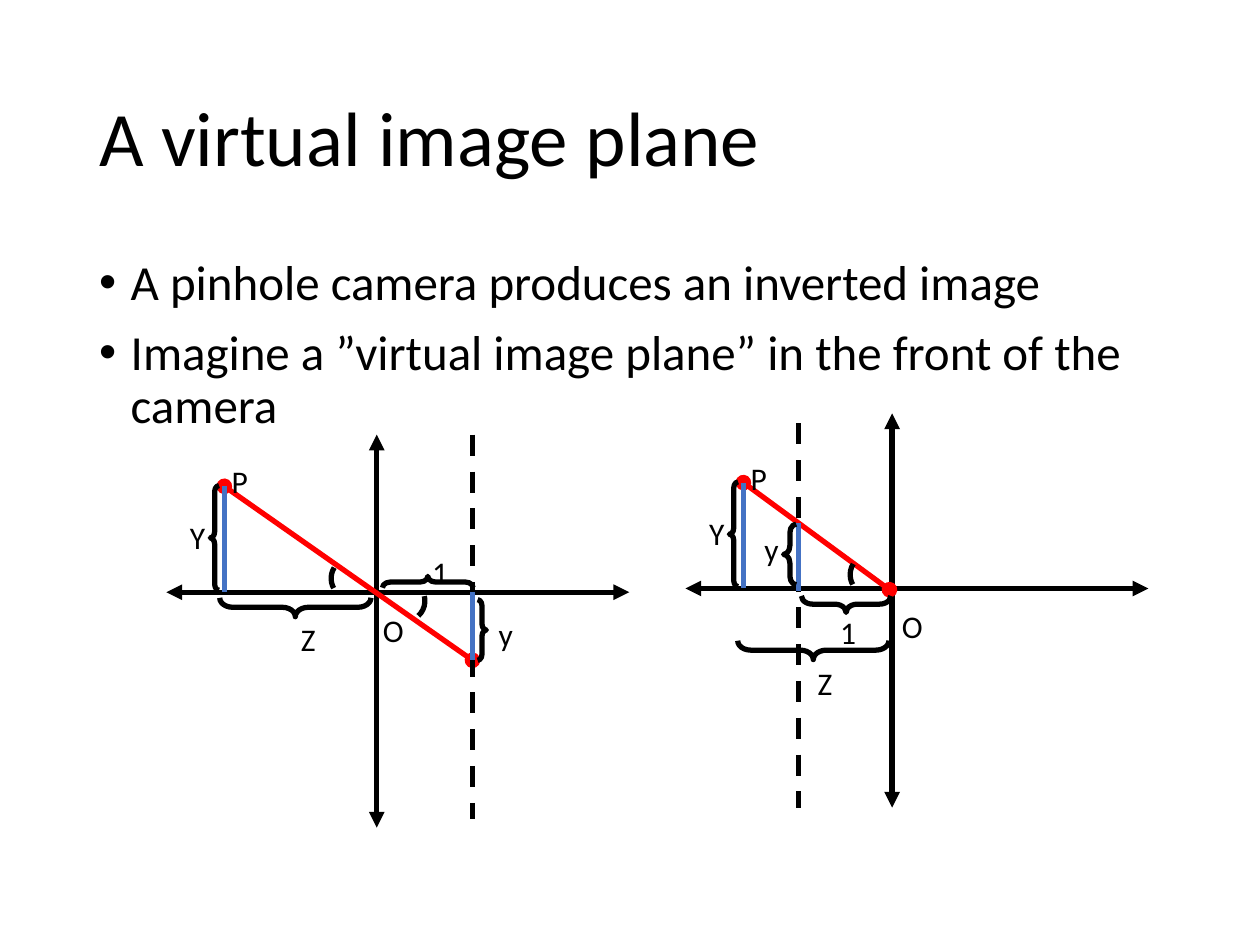
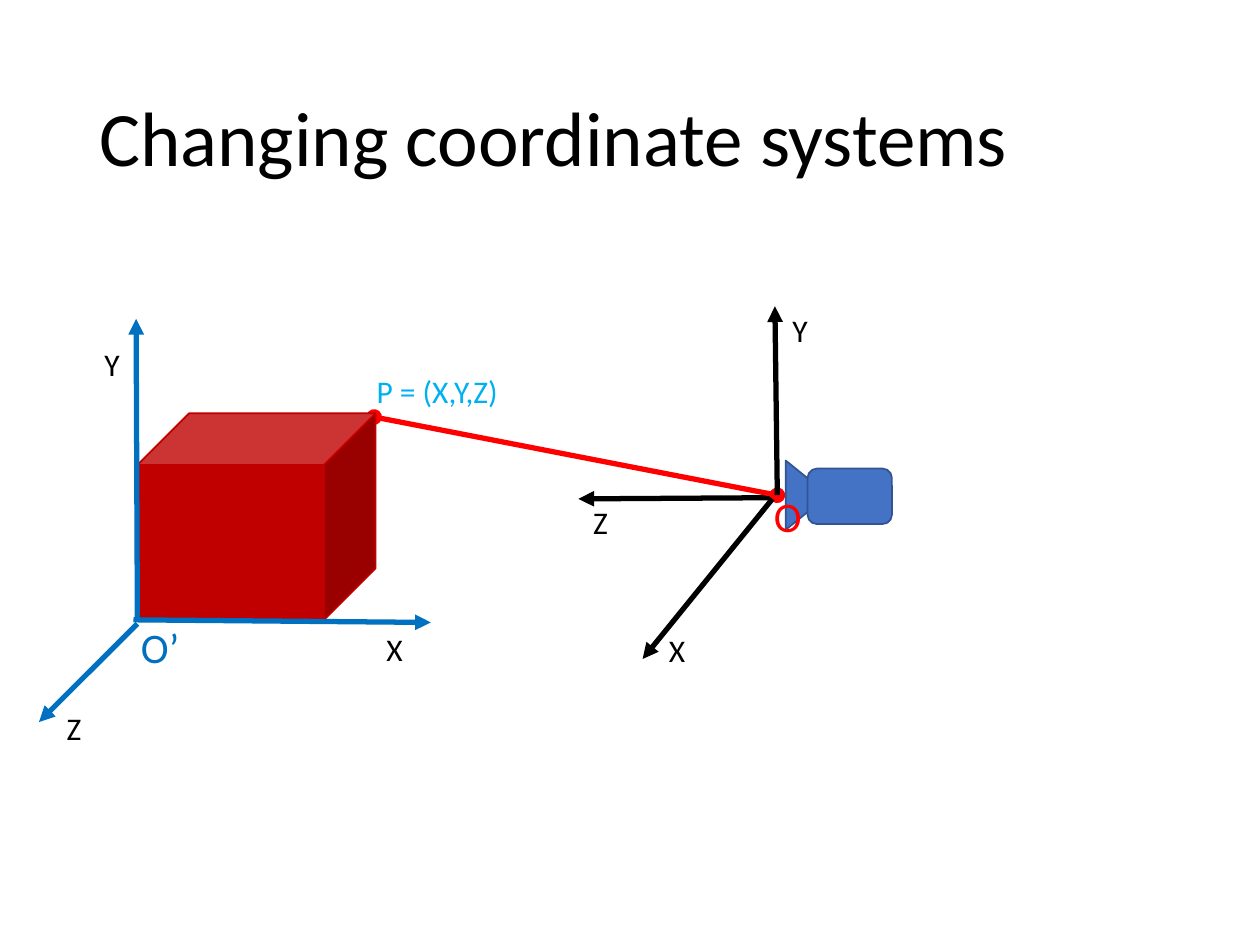
"""Build two slides on the virtual image plane and on changing coordinate systems."""
import pptx
import pptx.dml.color
import pptx.enum.dml
import pptx.enum.shapes
import pptx.enum.text
import pptx.oxml
import pptx.oxml.ns
import pptx.util

Pt = pptx.util.Pt
SHAPES = pptx.enum.shapes.MSO_SHAPE
COLOURS = {
    "black": "000000",
    "ray": "FF0000",
    "segment": "4472C4",
    "camera edge": "325491",
    "cube": "C00000",
    "world": "0070C0",
    "point": "00B0F0",
}
FONT = "Calibri"
TITLE_ONLY, TITLE_AND_CONTENT = 5, 1


class Deck:
    def __init__(self):
        self.presentation = pptx.Presentation()
        self.presentation.slide_width = Pt(720)
        self.presentation.slide_height = Pt(540)
        self.slide = None

    def colour(self, name):
        return pptx.dml.color.RGBColor.from_string(COLOURS[name])

    def place(self, shape, left, top, width, height):
        shape.left, shape.top = Pt(left), Pt(top)
        shape.width, shape.height = Pt(width), Pt(height)

    def format_text(self, paragraph, size, colour="black"):
        for run in paragraph.runs:
            run.font.name = FONT
            run.font.size = Pt(size)
            run.font.color.rgb = self.colour(colour)

    def add_slide(self, title, layout=TITLE_ONLY):
        self.slide = self.presentation.slides.add_slide(
            self.presentation.slide_layouts[layout])
        shape = self.slide.shapes.title
        self.place(shape, 49.5, 28.75, 621, 104.4)
        shape.text_frame.text = title
        shape.text_frame.vertical_anchor = pptx.enum.text.MSO_ANCHOR.MIDDLE
        paragraph = shape.text_frame.paragraphs[0]
        paragraph.alignment = pptx.enum.text.PP_ALIGN.LEFT
        paragraph.line_spacing = 0.9
        self.format_text(paragraph, 44)

    def bullets(self, lines):
        body = self.slide.placeholders[1]
        self.place(body, 49.5, 143.75, 621, 342.6)
        body.text_frame.text = "\n".join(lines)
        for paragraph in body.text_frame.paragraphs:
            paragraph.line_spacing = 0.9
            paragraph.space_before = Pt(10)
            properties = paragraph._p.get_or_add_pPr()
            properties.set("marL", str(Pt(18)))
            properties.set("indent", str(Pt(-18)))
            self.format_text(paragraph, 28)

    def label(self, text, left, top, width=30, height=28.8, size=18, colour="black"):
        box = self.slide.shapes.add_textbox(Pt(left), Pt(top), Pt(width), Pt(height))
        box.text_frame.word_wrap = True
        box.text_frame.text = text
        self.format_text(box.text_frame.paragraphs[0], size, colour)

    def line(self, start, end, colour="black", head=None, tail=None, dashed=False):
        connector = self.slide.shapes.add_connector(
            pptx.enum.shapes.MSO_CONNECTOR.STRAIGHT,
            Pt(start[0]), Pt(start[1]), Pt(end[0]), Pt(end[1]))
        connector.line.color.rgb = self.colour(colour)
        connector.line.width = Pt(3)
        if dashed:
            connector.line.dash_style = pptx.enum.dml.MSO_LINE.DASH
        outline = connector.line._get_or_add_ln()
        for tag, kind in (("a:headEnd", head), ("a:tailEnd", tail)):
            if kind:
                end_mark = pptx.oxml.ns.qn(tag)
                outline.makeelement(end_mark)
                pptx.oxml.parse_xml  
                element = outline.makeelement(end_mark, {"type": kind})
                outline.append(element)
        properties = connector._element.spPr
        properties.append(properties.makeelement(pptx.oxml.ns.qn("a:effectLst")))

    def shape(self, kind, box, fill=None, edge="black", weight=3, rotation=0,
              adjustments=()):
        shape = self.slide.shapes.add_shape(kind, *(Pt(length) for length in box))
        shape.shadow.inherit = False
        shape.rotation = rotation
        if fill:
            shape.fill.solid()
            shape.fill.fore_color.rgb = self.colour(fill)
        else:
            shape.fill.background()
        shape.line.color.rgb = self.colour(edge)
        shape.line.width = Pt(weight)
        for index, value in enumerate(adjustments):
            shape.adjustments[index] = value

    def brace(self, left, top, width, height, rotation=0):
        self.shape(SHAPES.LEFT_BRACE, (left, top, width, height),
                   rotation=rotation, adjustments=(0.687, 0.5))

    def angle(self, left, top, rotation=180):
        self.shape(SHAPES.ARC, (left, top, 12.2, 17.3),
                   rotation=rotation, adjustments=(185.85, 32.954))

    def pinhole(self, point, axis_x, axis_span, ray_end, plane_x, plane_span, segment):
        x, y = point
        ground = y + 60.5
        arrows = {"head": "triangle", "tail": "triangle"}
        self.line((axis_x, axis_span[0]), (axis_x, axis_span[1]), **arrows)
        self.line((x - 33.1, ground), (x + 231.4, ground), **arrows)
        self.line(point, ray_end, "ray", "oval", "oval")
        self.line(point, (x, ground), "segment")
        self.line((plane_x, plane_span[0]), (plane_x, plane_span[1]), dashed=True)
        self.line((plane_x, segment[0]), (plane_x, segment[1]), "segment")
        self.label("P", x - 3, y - 17.3, 34.6)
        self.label("O", x + 83.5, y + 67.7)
        self.angle(x + 61, y + 43.9)
        self.label("Y", x - 26.7, y + 14.4, 16)
        self.brace(x - 8, y - 0.4, 5, 59.8)


def virtual_plane_slide(deck):
    deck.add_slide("A virtual image plane", TITLE_AND_CONTENT)
    deck.bullets(["A pinhole camera produces an inverted image",
                  "Imagine a ”virtual image plane” in the front of the camera"])

    deck.pinhole((128.2, 277.9), 215.3, (248.4, 473), (270, 377.3),
                 270, (248.4, 468), (338.4, 377.3))
    deck.angle(230.4, 336.2, 15.2)
    deck.label("y", 277.9, 347.8, 16)
    deck.brace(272.9, 342.7, 5, 34.6, 180)
    deck.brace(163.4, 303.8, 10.8, 86.4, 270)
    deck.brace(241.2, 306.7, 6.5, 51.8, 90)
    deck.label("Z", 164.9, 350.6, 16)
    deck.label("1", 239.8, 312.5, 21)

    deck.pinhole((424.8, 275.8), 509.8, (236.2, 461.5), (508.3, 337),
                 456.5, (241.9, 461.5), (298.8, 337.7))
    deck.brace(447.8, 299.5, 7.2, 34.6)
    deck.label("y", 429.8, 299.5, 16)
    deck.brace(478.8, 319.7, 9.4, 51.1, 270)
    deck.label("1", 473, 347, 21)
    deck.brace(459.4, 328.3, 10.8, 86.4, 270)
    deck.label("Z", 460.1, 375.8, 16)


def coordinate_slide(deck):
    deck.add_slide("Changing coordinate systems")
    deck.shape(SHAPES.ISOSCELES_TRIANGLE, (441.4, 270.7, 39.6, 24.5),
               "segment", "camera edge", 1, 90)

    deck.label("Y", 445.7, 174.2)
    deck.line((445, 284.4), (330.5, 285.1), tail="triangle")
    deck.line((444.2, 283), (213.8, 238.3), "ray", "oval", "oval")
    deck.line((444.2, 283), (442.8, 175), tail="triangle")
    deck.line((441.4, 285.1), (367.2, 376.6), tail="triangle")
    deck.label("X", 375.1, 357.1)
    deck.label("Z", 331.9, 283.7)
    deck.label("O", 436.3, 276.5, 13, 21, 24, "ray")
    deck.label("P = (X,Y,Z)", 208.1, 208.8, 91.4, colour="point")
    deck.shape(SHAPES.ROUNDED_RECTANGLE, (461.5, 267.8, 48.2, 31.7),
               "segment", "camera edge", 1)

    deck.shape(SHAPES.CUBE, (78.5, 236.2, 136.1, 118.1), "cube", "cube", 1)
    for start, end in (((78.5, 354.2), (77.8, 182.2)),
                       ((76.3, 354.2), (246.2, 355.7)),
                       ((78.5, 356.4), (22.3, 412.6))):
        deck.line(start, end, "world", tail="triangle")
    for text, left, top in (("X", 213.8, 356.4), ("Y", 52.6, 193.7), ("Z", 31, 401.8)):
        deck.label(text, left, top, 42)
    deck.label("O’", 73.4, 351.4, 41, 36, 24, "world")


def main():
    deck = Deck()
    virtual_plane_slide(deck)
    coordinate_slide(deck)
    deck.presentation.save("out.pptx")


if __name__ == "__main__":
    main()
